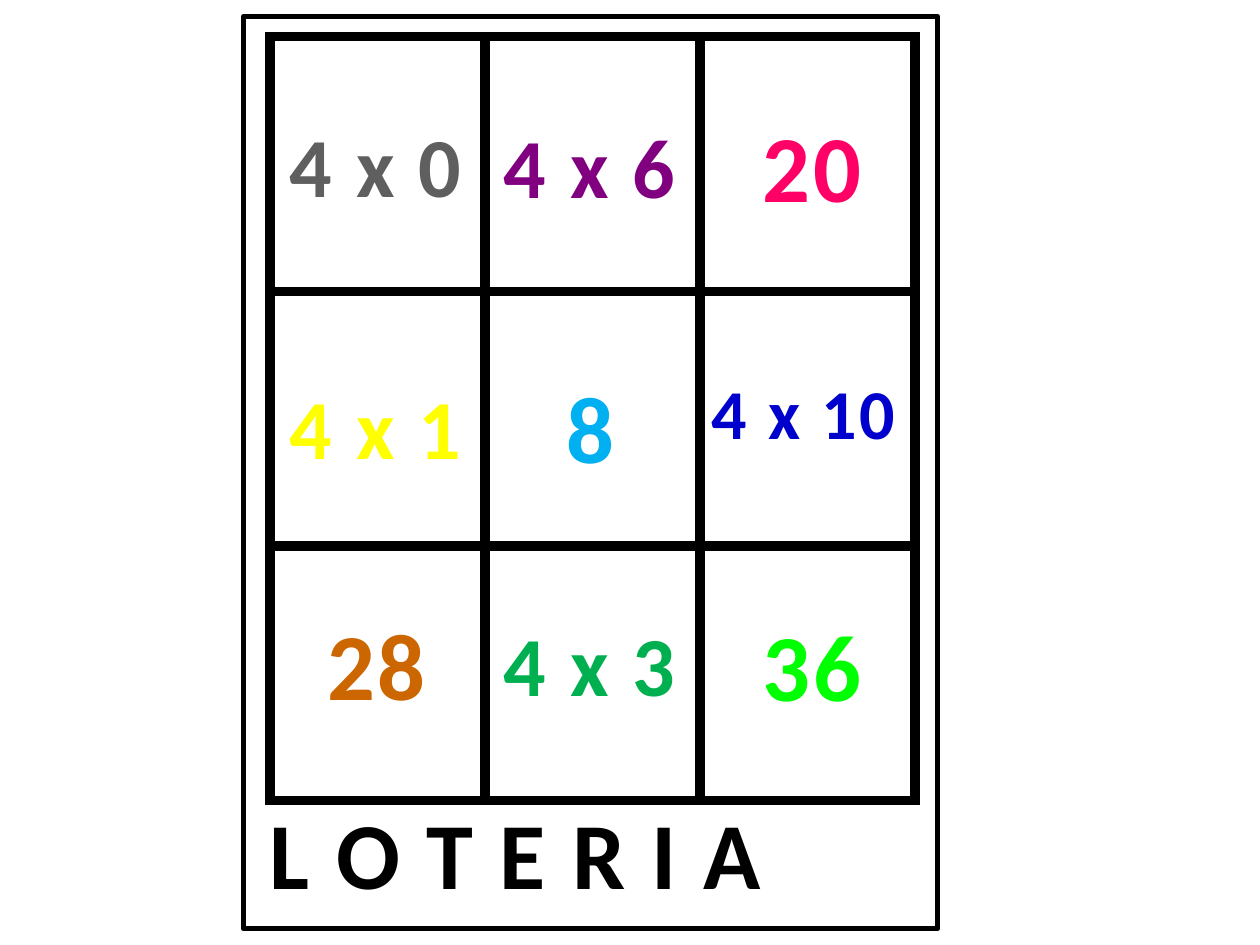
import pptx
import pptx.util
import pptx.dml.color
import pptx.enum.shapes
import pptx.enum.text
import pptx.oxml
import pptx.oxml.ns
from pptx.util import Pt


def color(hex_string):
    return pptx.dml.color.RGBColor.from_string(hex_string)


def write_label(shape, text, size, hex_string):
    frame = shape.text_frame
    frame.text = text
    frame.word_wrap = False
    frame.auto_size = pptx.enum.text.MSO_AUTO_SIZE.SHAPE_TO_FIT_TEXT
    frame.vertical_anchor = pptx.enum.text.MSO_ANCHOR.TOP
    paragraph = frame.paragraphs[0]
    paragraph.alignment = pptx.enum.text.PP_ALIGN.CENTER
    paragraph.line_spacing = 1.0
    run = paragraph.runs[0]
    run.font.name = "Calibri"
    run.font.size = Pt(size)
    run.font.bold = True
    run.font.color.rgb = color(hex_string)
    run.font._element.set("spc", "150")


presentation = pptx.Presentation()
presentation.slide_width = Pt(720)
presentation.slide_height = Pt(540)
slide = presentation.slides.add_slide(presentation.slide_layouts[5])

title = slide.shapes.title
title.left, title.top, title.width, title.height = Pt(144.7), Pt(450.7), Pt(300.2), Pt(72.7)
write_label(title, "L O T E R I A", 54, "000000")

column_width, row_height = 122.9, 145.6
table = slide.shapes.add_table(
    3, 3, Pt(154.3), Pt(20.8), Pt(3 * column_width), Pt(3 * row_height)
).table
table.first_row = False
table.horz_banding = False
for column in table.columns:
    column.width = Pt(column_width)
for row in table.rows:
    row.height = Pt(row_height)
for cell in table.iter_cells():
    cell_properties = cell._tc.get_or_add_tcPr()
    for side in ("lnL", "lnR", "lnT", "lnB"):
        cell_properties.append(pptx.oxml.parse_xml(
            f'<a:{side} {pptx.oxml.ns.nsdecls("a")} w="{Pt(6)}"><a:solidFill>'
            f'<a:srgbClr val="000000"/></a:solidFill></a:{side}>'
        ))
    cell.fill.background()

card_frame = slide.shapes.add_shape(
    pptx.enum.shapes.MSO_SHAPE.RECTANGLE, Pt(139), Pt(9.4), Pt(396.7), Pt(521.3)
)
card_frame.shadow.inherit = False
card_frame.fill.background()
card_frame.line.color.rgb = color("000000")
card_frame.line.width = Pt(3)

labels = [
    ("4 x 0", 48, "5F5F5F", 157, 61.2, 115.2),
    ("4 x 6", 48, "800080", 279.4, 61.9, 115.2),
    ("20", 54, "FF0066", 427.7, 58.3, 72.7),
    ("4 x 1", 48, "FFFF00", 157, 211, 115.2),
    ("8", 54, "00B0F0", 315.4, 207.4, 43.9),
    ("4 x 10", 40, "0000CC", 398.2, 207.4, 121.7),
    ("28", 54, "CC6600", 178.6, 342.7, 72.7),
    ("4 x 3", 48, "00B050", 279.4, 346.3, 115.2),
    ("36", 54, "00FF00", 427.7, 343.4, 72.7),
]
for text, size, hex_string, left, top, width in labels:
    height = size * 1.21 + 7.2
    box = slide.shapes.add_textbox(Pt(left), Pt(top), Pt(width), Pt(height))
    write_label(box, text, size, hex_string)

presentation.save("out.pptx")
